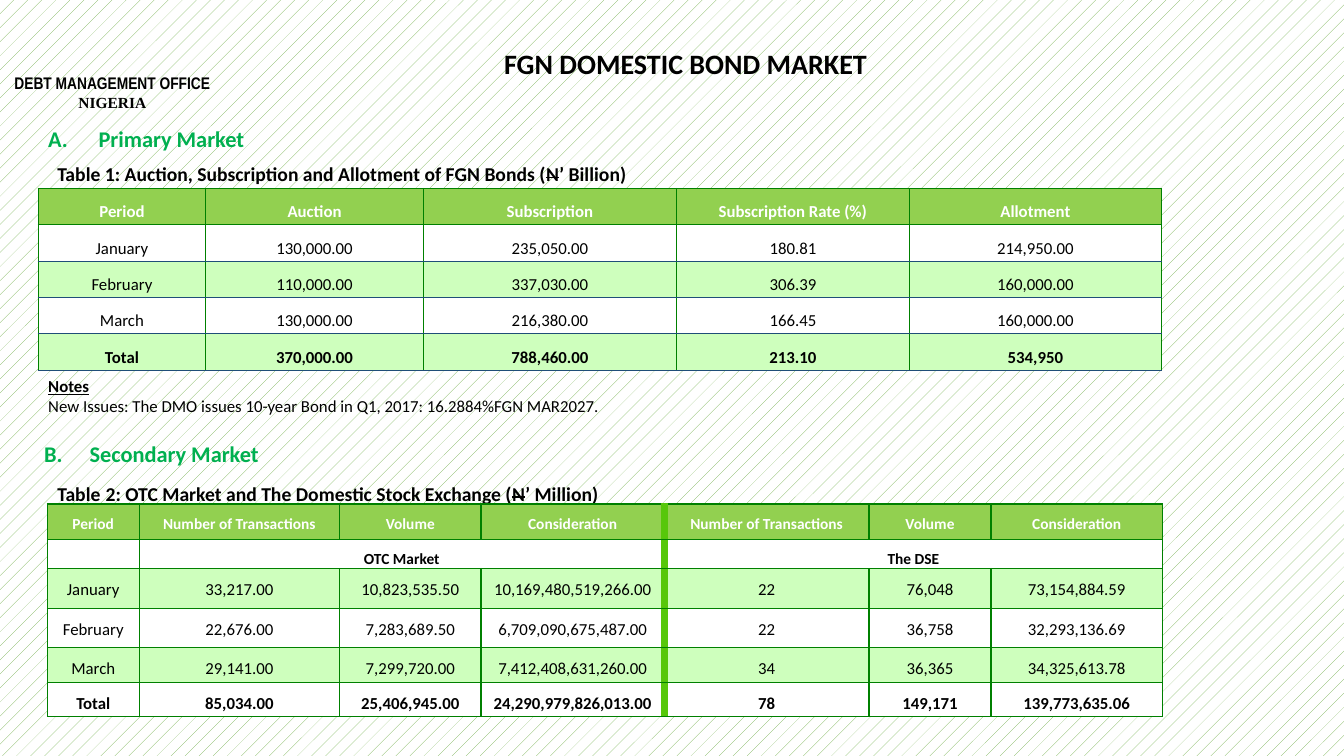
from dataclasses import dataclass, replace

import pptx
import pptx.dml.color
import pptx.enum.dml
import pptx.enum.text
import pptx.oxml
import pptx.oxml.ns
import pptx.slide
import pptx.table
import pptx.text.text
import pptx.util
from pptx.util import Inches


@dataclass(frozen=True)
class Theme:
    font: str = "Calibri"
    narrow: str = "Arial Narrow"
    serif: str = "Times New Roman"
    black: str = "000000"
    white: str = "FFFFFF"
    heading: str = "00B050"
    hatch: str = "70AD47"
    header: str = "92D050"
    band: str = "CEFFBD"
    grid: str = "008000"
    rule: str = "1F4E78"
    divider: str = "57C70B"
    title: float = 20
    tab: float = 18
    section: float = 16
    caption: float = 14
    body: float = 12
    small: float = 11


THEME = Theme()


@dataclass(frozen=True)
class Run:
    text: str
    size: float = THEME.body
    bold: bool = True
    color: str = THEME.black
    font: str = THEME.font
    strike: bool = False
    underline: bool = False


@dataclass(frozen=True)
class Box:
    left: float
    top: float
    width: float
    height: float
    paragraphs: list[list[Run]]
    centred: bool = False
    tab: float | None = None


@dataclass(frozen=True)
class Line:
    color: str
    width: float


GRID = Line(THEME.grid, 1)
RULE = Line(THEME.rule, 0.5)
DIVIDER = Line(THEME.divider, 6)


@dataclass(frozen=True)
class Grid:
    left: float
    top: float
    columns: list[float]
    heights: list[float]
    rows: list[list[str]]
    fills: list[str]
    runs: list[Run]
    anchor: pptx.enum.text.MSO_ANCHOR
    row_line: Line = GRID
    divider_column: int | None = None
    merged_row: int | None = None
    merged_columns: tuple[tuple[int, int], ...] = ()


def rgb(color: str) -> pptx.dml.color.RGBColor:
    return pptx.dml.color.RGBColor.from_string(color)


def add_run(p: pptx.text.text._Paragraph, run: Run) -> None:
    r = p.add_run()
    r.text = run.text
    r.font.name = run.font
    r.font.size = pptx.util.Pt(run.size)
    r.font.bold = run.bold
    r.font.color.rgb = rgb(run.color)
    if run.underline:
        r.font.underline = True
    if run.strike:
        r.font._element.set("strike", "sngStrike")


def add_box(s: pptx.slide.Slide, box: Box) -> None:
    sp = s.shapes.add_textbox(*map(Inches, (box.left, box.top, box.width, box.height)))
    tf = sp.text_frame
    tf.word_wrap = True
    for i, runs in enumerate(box.paragraphs):
        p = tf.add_paragraph() if i else tf.paragraphs[0]
        if box.centred:
            p.alignment = pptx.enum.text.PP_ALIGN.CENTER
        if box.tab:
            tabs = pptx.oxml.ns.qn("a:tabLst")
            stop = p._p.get_or_add_pPr().makeelement(tabs, {})
            p._p.get_or_add_pPr().append(stop)
            stop.append(stop.makeelement(pptx.oxml.ns.qn("a:tab"), {"pos": str(Inches(box.tab)), "algn": "l"}))
        for run in runs:
            add_run(p, run)


def set_borders(cell: pptx.table._Cell, sides: dict[str, Line]) -> None:
    tc_pr = cell._tc.get_or_add_tcPr()
    for side, line in sides.items():
        tc_pr.append(pptx.oxml.parse_xml(
            f'<a:ln{side} {pptx.oxml.ns.nsdecls("a")} w="{pptx.util.Pt(line.width)}">'
            f'<a:solidFill><a:srgbClr val="{line.color}"/></a:solidFill></a:ln{side}>'))


def add_grid(s: pptx.slide.Slide, grid: Grid) -> None:
    frame = s.shapes.add_table(
        len(grid.heights), len(grid.columns), Inches(grid.left), Inches(grid.top),
        Inches(sum(grid.columns)), Inches(sum(grid.heights)))
    table = frame.table
    table.first_row = table.horz_banding = False
    for column, width in zip(table.columns, grid.columns):
        column.width = Inches(width)
    for row, height in zip(table.rows, grid.heights):
        row.height = Inches(height)
    for i, texts in enumerate(grid.rows):
        spans = dict(grid.merged_columns) if i == grid.merged_row else {}
        for j, text in enumerate(texts):
            cell = table.cell(i, j)
            end = spans.get(j, j)
            set_borders(cell, {
                "L": DIVIDER if j == grid.divider_column else GRID,
                "R": DIVIDER if end + 1 == grid.divider_column else GRID,
                "T": GRID if i == 1 else grid.row_line if i else GRID,
                "B": grid.row_line if i else GRID,
            })
            cell.fill.solid()
            cell.fill.fore_color.rgb = rgb(grid.fills[i])
            cell.vertical_anchor = grid.anchor
            cell.margin_left = cell.margin_right = cell.margin_top = Inches(0.01)
            cell.margin_bottom = 0
            p = cell.text_frame.paragraphs[0]
            p.alignment = pptx.enum.text.PP_ALIGN.CENTER
            p.line_spacing = 1.5
            if text:
                add_run(p, replace(grid.runs[i], text=text))
            else:
                p._p.get_or_add_endParaRPr().set("sz", str(THEME.small * 100))
        for start, end in spans.items():
            table.cell(i, start).merge(table.cell(i, end))


def caption(text: str) -> Run:
    return Run(text, THEME.caption)


def section(left: float, top: float, width: float, tab: float, letter: str, name: str) -> Box:
    sizes = ((letter, THEME.section), ("\t", THEME.tab), (name, THEME.section))
    return Box(left, top, width, 0.4, [[Run(t, size, color=THEME.heading) for t, size in sizes]], tab=tab)


NAIRA = Run("N", THEME.caption, strike=True)
PLAIN, TOTAL = Run("", bold=False), Run("")

BOXES = [
    Box(0, 0.67, 2.23, 0.56, [[Run("DEBT MANAGEMENT OFFICE", font=THEME.narrow)],
                              [Run("NIGERIA", THEME.small, font=THEME.serif)]], centred=True),
    Box(0.47, 1.56, 7.47, 0.34, [[
        caption("Table 1: Auction, Subscription and Allotment of FGN Bonds ("), NAIRA, caption("’ Billion)")]]),
    Box(0.47, 4.7, 7.11, 0.37, [[
        caption("Table"), Run(" ", THEME.section),
        caption("2: OTC Market and The Domestic Stock Exchange ("), NAIRA, caption("’ Million)")]]),
    section(0.38, 1.16, 3.24, 0.5, "A.", "Primary Market"),
    section(0.34, 4.29, 5.68, 0.45, "B.", "Secondary Market"),
    Box(2.5, 0.41, 8.6, 0.44, [[Run("FGN DOMESTIC BOND MARKET", THEME.title)]], centred=True),
    Box(0.38, 3.68, 11.15, 0.5, [
        [Run("Notes", underline=True)],
        [Run("New Issues: The DMO issues 10-year Bond in Q1, 2017: 16.2884%FGN MAR2027.", bold=False)]]),
]

MEASURES = ["Number of Transactions", "Volume", "Consideration"]
GRIDS = [
    Grid(0.38, 1.87, [1.66, 2.16, 2.51, 2.31, 2.5], [0.36] * 5, [
        ["Period", "Auction", "Subscription", "Subscription Rate (%)", "Allotment"],
        ["January", "130,000.00", "235,050.00", "180.81", "214,950.00"],
        ["February", "110,000.00", "337,030.00", "306.39", "160,000.00"],
        ["March", "130,000.00", "216,380.00", "166.45", "160,000.00"],
        ["Total", "370,000.00", "788,460.00", "213.10", "534,950"],
    ], [THEME.header] + [THEME.white, THEME.band] * 2,
        [Run("", color=THEME.white), *[PLAIN] * 3, TOTAL], pptx.enum.text.MSO_ANCHOR.MIDDLE, RULE),
    Grid(0.47, 5, [0.91, 1.99, 1.4, 1.82, 2.03, 1.21, 1.7], [0.35, 0.29, 0.4, 0.38, 0.35, 0.34], [
        ["Period", *MEASURES, *MEASURES],
        ["", "OTC Market", "", "", "The DSE", "", ""],
        ["January", "33,217.00", "10,823,535.50", "10,169,480,519,266.00", "22", "76,048", "73,154,884.59"],
        ["February", "22,676.00", "7,283,689.50", "6,709,090,675,487.00", "22", "36,758", "32,293,136.69"],
        ["March", "29,141.00", "7,299,720.00", "7,412,408,631,260.00", "34", "36,365", "34,325,613.78"],
        ["Total", "85,034.00", "25,406,945.00", "24,290,979,826,013.00", "78", "149,171", "139,773,635.06"],
    ], [THEME.header, THEME.white] + [THEME.band, THEME.white] * 2,
        [Run("", THEME.small, color=THEME.white), Run("", THEME.small), *[PLAIN] * 3, TOTAL],
        pptx.enum.text.MSO_ANCHOR.TOP, divider_column=4, merged_row=1, merged_columns=((1, 3), (4, 6))),
]


def main() -> None:
    prs = pptx.Presentation()
    prs.slide_width, prs.slide_height = Inches(13.33), Inches(7.5)
    s = prs.slides.add_slide(prs.slide_layouts[6])
    fill = s.background.fill
    fill.patterned()
    fill.pattern = pptx.enum.dml.MSO_PATTERN.PERCENT_5
    fill.fore_color.rgb, fill.back_color.rgb = rgb(THEME.hatch), rgb(THEME.white)
    for box in BOXES:
        add_box(s, box)
    for grid in GRIDS:
        add_grid(s, grid)
    prs.save("out.pptx")


if __name__ == "__main__":
    main()
